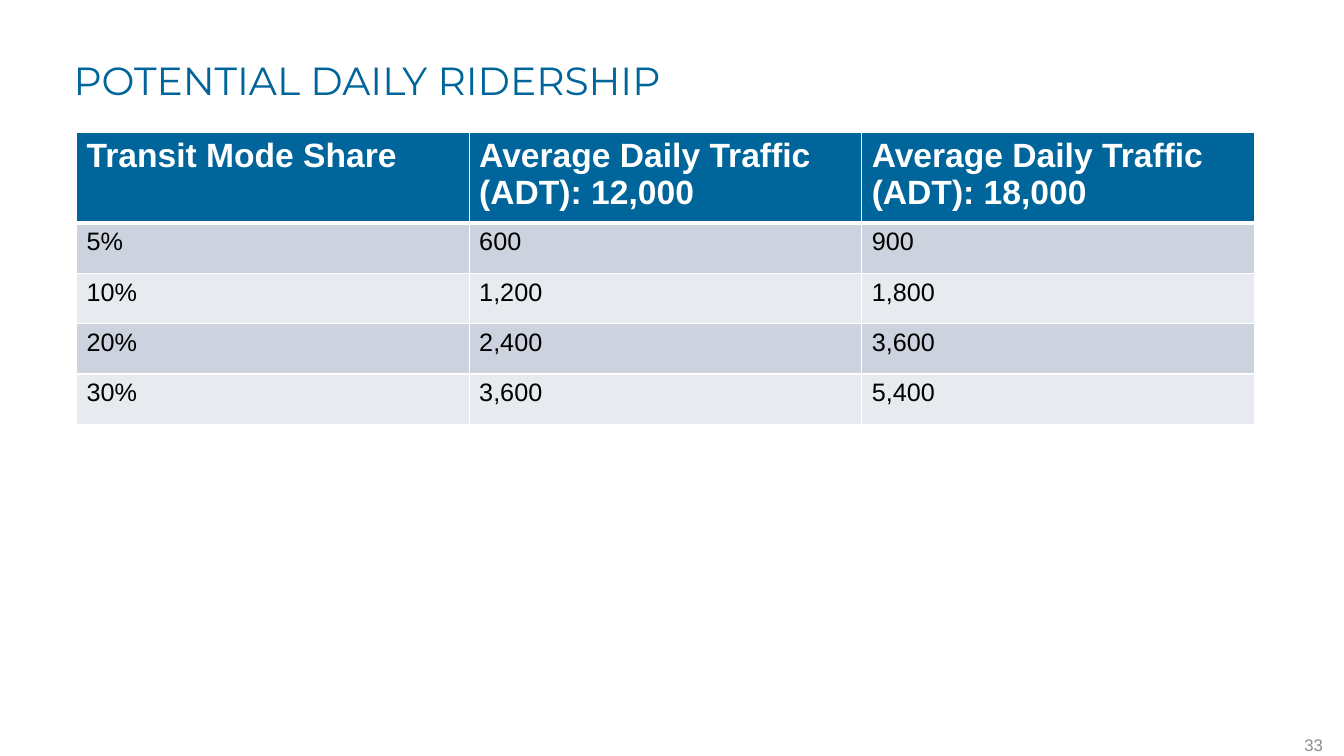
from dataclasses import dataclass

import pptx
import pptx.dml.color
import pptx.enum.text
import pptx.oxml
import pptx.oxml.ns
import pptx.util

PX = 9144


@dataclass(frozen=True)
class Theme:
    blue: str = "00659A"
    white: str = "FFFFFF"
    black: str = "000000"
    gray: str = "8C8C8C"
    bands: tuple = ("CCD3DE", "E7EAEF")
    heading: str = "Montserrat"
    body: str = "Arial"
    title_size: int = 28
    header_size: int = 24
    cell_size: int = 18
    number_size: int = 12
    rule: int = 1
    header_rule: int = 3


class Deck:
    def __init__(self, theme, width, height):
        self.theme = theme
        self.prs = pptx.Presentation()
        self.prs.slide_width, self.prs.slide_height = width * PX, height * PX
        self.s = self.prs.slides.add_slide(self.prs.slide_layouts[5])

    def run(self, p, text, font, size, color, bold=False):
        r = p.add_run()
        r.text = text
        r.font.name, r.font.size, r.font.bold = font, pptx.util.Pt(size), bold
        r.font.color.rgb = pptx.dml.color.RGBColor.from_string(color)

    def title(self, text, x, y, w, h):
        sp = self.s.shapes.title
        sp.left, sp.top, sp.width, sp.height = (v * PX for v in (x, y, w, h))
        tf = sp.text_frame
        tf.word_wrap = True
        tf.auto_size = pptx.enum.text.MSO_AUTO_SIZE.NONE
        tf.vertical_anchor = pptx.enum.text.MSO_ANCHOR.BOTTOM
        p = tf.paragraphs[0]
        p.alignment = pptx.enum.text.PP_ALIGN.LEFT
        p.line_spacing = 0.9
        p.space_before = pptx.util.Pt(0)
        self.run(p, text, self.theme.heading, self.theme.title_size, self.theme.blue)

    def page_number(self, text, x, y, w, h):
        sp = self.s.shapes.add_textbox(*(v * PX for v in (x, y, w, h)))
        tf = sp.text_frame
        tf.word_wrap = True
        tf.vertical_anchor = pptx.enum.text.MSO_ANCHOR.MIDDLE
        p = tf.paragraphs[0]
        p.alignment = pptx.enum.text.PP_ALIGN.RIGHT
        self.run(p, text, self.theme.body, self.theme.number_size, self.theme.gray)

    def borders(self, cell, top, bottom):
        tcPr = cell._tc.get_or_add_tcPr()
        sides = {"L": self.theme.rule, "R": self.theme.rule, "T": top, "B": bottom}
        for side, points in sides.items():
            tcPr.append(pptx.oxml.parse_xml(
                f'<a:ln{side} {pptx.oxml.ns.nsdecls("a")} w="{pptx.util.Pt(points)}">'
                f'<a:solidFill><a:srgbClr val="{self.theme.white}"/></a:solidFill>'
                f'</a:ln{side}>'))

    def cell(self, cell, text, row):
        t = self.theme
        header = row == 0
        self.borders(cell,
                     t.header_rule if row == 1 else t.rule,
                     t.header_rule if header else t.rule)
        fill = t.blue if header else t.bands[(row - 1) % 2]
        cell.fill.solid()
        cell.fill.fore_color.rgb = pptx.dml.color.RGBColor.from_string(fill)
        self.run(cell.text_frame.paragraphs[0], text, t.body,
                 t.header_size if header else t.cell_size,
                 t.white if header else t.black, header)

    def table(self, rows, x, y, w, header_h, row_h):
        heights = [header_h] + [row_h] * (len(rows) - 1)
        frame = self.s.shapes.add_table(
            len(rows), len(rows[0]), x * PX, y * PX, w * PX, sum(heights) * PX)
        table = frame.table
        for i, (height, values) in enumerate(zip(heights, rows)):
            table.rows[i].height = height * PX
            for j, text in enumerate(values):
                self.cell(table.cell(i, j), text, i)


def main():
    deck = Deck(Theme(), 1333, 750)
    deck.title("POTENTIAL DAILY RIDERSHIP", 63, 29, 1204, 79)
    deck.page_number("33", 1255, 727, 67, 23)
    traffic = (12000, 18000)
    rows = [["Transit Mode Share"] + [f"Average Daily Traffic (ADT): {adt:,}" for adt in traffic]]
    for share in (5, 10, 20, 30):
        rows.append([f"{share}%"] + [f"{adt * share // 100:,}" for adt in traffic])
    deck.table(rows, 76, 131, 1168, 84, 50)
    deck.prs.save("out.pptx")


if __name__ == "__main__":
    main()
